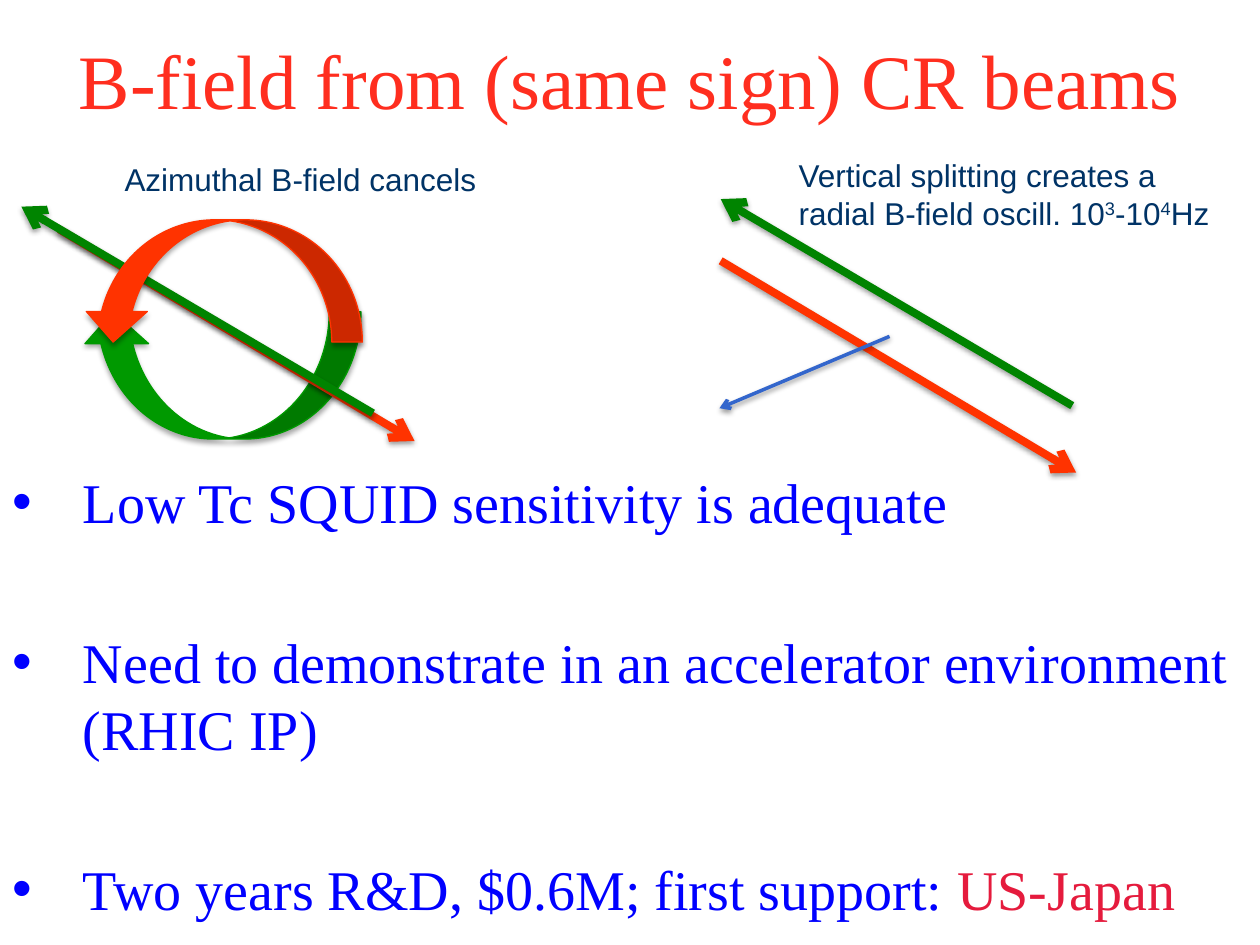
from dataclasses import dataclass

from lxml import etree
from pptx import Presentation
from pptx import util as u
from pptx.dml.color import RGBColor
from pptx.enum import shapes, text
from pptx.oxml import ns


@dataclass(frozen=True)
class Theme:
    serif: str = "Times New Roman"
    sans: str = "Arial"
    title_size: int = 44
    body_size: int = 32
    label_size: int = 18
    title: str = "FF2E1F"
    body: str = "0000FF"
    accent: str = "E51B3D"
    label: str = "003366"
    red: str = "FF3300"
    green: str = "009900"
    dark_green: str = "008400"
    blue: str = "3366CC"


T = Theme()
SLIDE_W, SLIDE_H = u.Inches(10), u.Inches(7.5)
BULLET_INDENT = u.Inches(0.56)
BULLET_GAP = u.Pt(53)


def px(share):
    """Length for a percentage of the slide's width."""
    return u.Emu(round(SLIDE_W * share / 100))


def py(share):
    """Length for a percentage of the slide's height."""
    return u.Emu(round(SLIDE_H * share / 100))


def area(left, top, width, height):
    return px(left), py(top), px(width), py(height)


def sub(parent, tag, **attrs):
    return etree.SubElement(parent, ns.qn(tag), attrs)


def add_shadow(sp, alpha, distance):
    """Soft shadow straight below; call it once fill and line are set."""
    effects = sub(sp._element.spPr, "a:effectLst")
    shadow = sub(effects, "a:outerShdw", blurRad=str(u.Pt(3.1)),
                 dist=str(u.Pt(distance)), dir="5400000",
                 algn="ctr", rotWithShape="0")
    colour = sub(shadow, "a:srgbClr", val="000000")
    sub(colour, "a:alpha", val=str(alpha * 1000))


def add_run(p, words, *, font, size, colour, raised=False):
    r = p.add_run()
    r.text = words
    r.font.name, r.font.size = font, u.Pt(size)
    r.font.color.rgb = RGBColor.from_string(colour)
    if raised:
        r.font._element.set("baseline", "30000")


def add_bullet(p):
    pPr = p._p.get_or_add_pPr()
    pPr.set("marL", str(BULLET_INDENT))
    pPr.set("indent", str(-BULLET_INDENT))
    sub(pPr, "a:buFont", typeface=T.sans)
    sub(pPr, "a:buChar", char="•")


def add_text(slide, box, paragraphs, *, font, size, colour, align=None,
             anchor=text.MSO_ANCHOR.TOP, wrap=True, bullets=False,
             gap=None, top_inset=0.05):
    """Each paragraph is a list of (words, format changes) pairs."""
    tf = slide.shapes.add_textbox(*box).text_frame
    tf.word_wrap = wrap
    tf.auto_size = (text.MSO_AUTO_SIZE.NONE if wrap
                    else text.MSO_AUTO_SIZE.SHAPE_TO_FIT_TEXT)
    tf.vertical_anchor = anchor
    tf.margin_top = u.Inches(top_inset)
    for i, runs in enumerate(paragraphs):
        p = tf.add_paragraph() if i else tf.paragraphs[0]
        if bullets:
            add_bullet(p)
        if align is not None:
            p.alignment = align
        if i and gap is not None:
            p.space_before = gap
        for words, changes in runs:
            style = dict(font=font, size=size, colour=colour)
            add_run(p, words, **{**style, **changes})


def add_curved_arrow(slide, kind, box, colour):
    sp = slide.shapes.add_shape(kind, *box)
    sp.rotation = 90
    rgb = RGBColor.from_string(colour)
    sp.fill.solid()
    sp.fill.fore_color.rgb = rgb
    sp.line.color.rgb = rgb
    sp.line.width = u.Pt(0.75)
    add_shadow(sp, 35, 1.8)


def add_arrow(parent, start, end, colour, width=4.5):
    line = parent.shapes.add_connector(
        shapes.MSO_CONNECTOR.STRAIGHT,
        px(start[0]), py(start[1]), px(end[0]), py(end[1]))
    line.line.color.rgb = RGBColor.from_string(colour)
    line.line.width = u.Pt(width)
    sub(line.line._get_or_add_ln(), "a:tailEnd", type="arrow")
    add_shadow(line, 38, 1.6)


def add_cancelling_beams(slide):
    kinds = shapes.MSO_SHAPE
    add_curved_arrow(slide, kinds.CURVED_LEFT_ARROW,
                     area(12.5, 24.93, 10.1, 29.6), T.green)
    add_arrow(slide, (4.7, 24.27), (32.9, 46.67), T.red)
    add_arrow(slide, (29.6, 43.73), (1.7, 21.87), T.dark_green)
    add_curved_arrow(slide, kinds.CURVED_RIGHT_ARROW,
                     area(12.8, 14.93, 9.7, 29.6), T.red)


def add_split_beams(slide):
    beams = slide.shapes.add_group_shape()
    add_arrow(beams, (85.1, 42.93), (57.2, 21.07), T.dark_green)
    add_arrow(beams, (57.2, 27.6), (85.4, 50), T.red)
    add_arrow(beams, (70.6, 35.6), (57.1, 43.2), T.blue, width=2)


def main():
    prs = Presentation()
    prs.slide_width, prs.slide_height = SLIDE_W, SLIDE_H
    slide = prs.slides.add_slide(prs.slide_layouts[6])

    add_text(slide, area(0, 0, 100, 16.67),
             [[("B-field from (same sign) CR beams", {})]],
             font=T.serif, size=T.title_size, colour=T.title,
             align=text.PP_ALIGN.CENTER, anchor=text.MSO_ANCHOR.MIDDLE)
    add_cancelling_beams(slide)
    add_split_beams(slide)
    add_text(slide, area(0, 48.13, 100, 51.87), [
        [("Low Tc SQUID sensitivity is adequate", {})],
        [("Need to demonstrate in an accelerator environment (RHIC IP)", {})],
        [("Two years R&D, $0.6M; first support: ", {}),
         ("US-Japan", {"colour": T.accent})],
    ], font=T.serif, size=T.body_size, colour=T.body,
        bullets=True, gap=BULLET_GAP, top_inset=0.1)

    label = dict(font=T.sans, size=T.label_size, colour=T.label, wrap=False)
    power = {"raised": True}
    add_text(slide, area(8.9, 16.27, 30.4, 5.33),
             [[("Azimuthal B-field cancels", {})]], **label)
    add_text(slide, area(62.4, 15.87, 35.3, 9.47), [
        [("Vertical splitting creates a", {})],
        [("radial B-field oscill. 10", {}), ("3", power),
         ("-10", {}), ("4", power), ("Hz", {})],
    ], **label)
    prs.save("out.pptx")


if __name__ == "__main__":
    main()
